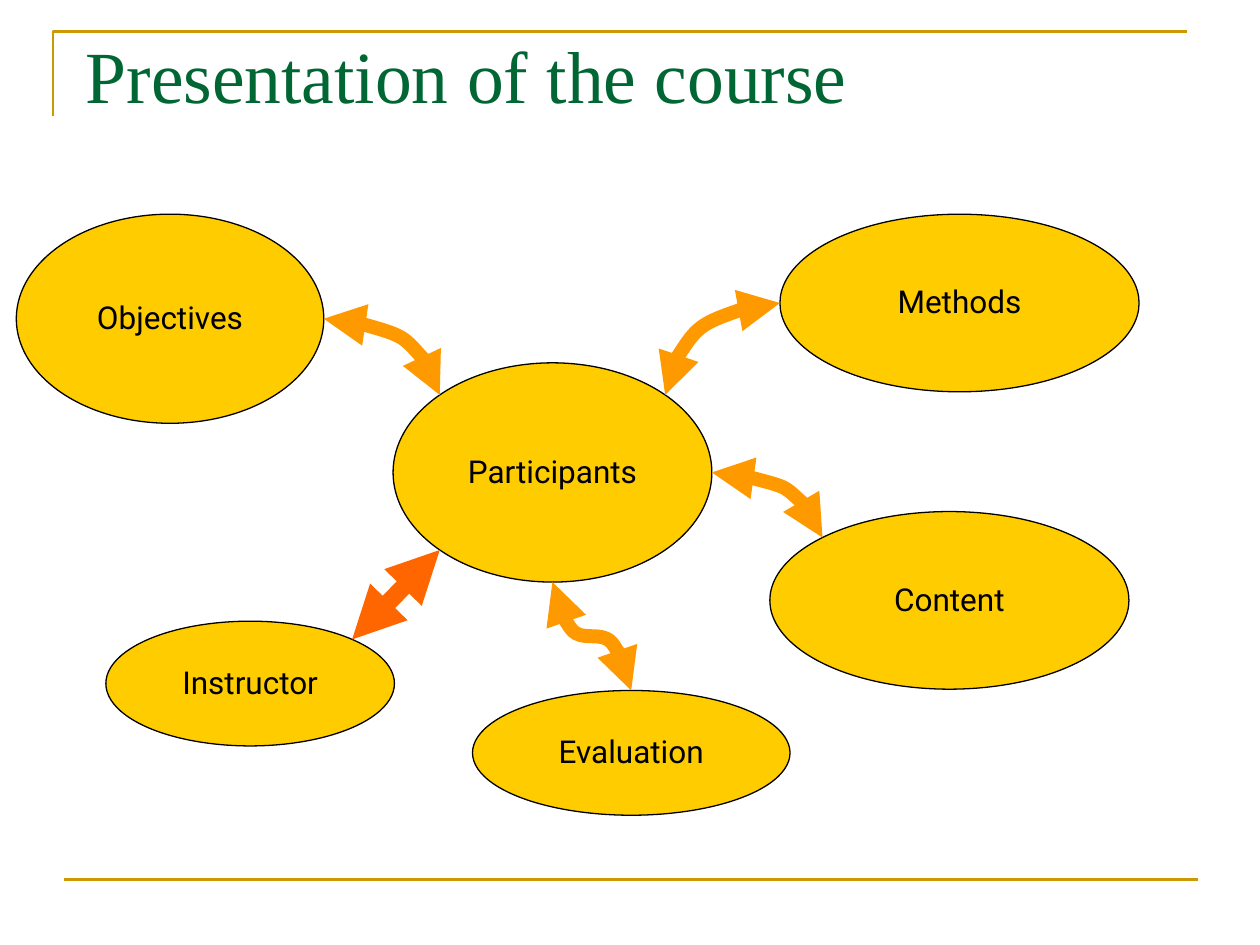
from dataclasses import dataclass
from math import sqrt

from lxml.etree import SubElement
from pptx import Presentation
from pptx.dml.color import RGBColor
from pptx.enum.shapes import MSO_CONNECTOR as Connector, MSO_SHAPE as Preset
from pptx.enum.text import MSO_ANCHOR as Anchor, MSO_AUTO_SIZE as AutoSize, PP_ALIGN as Align
from pptx.oxml.ns import qn
from pptx.util import Inches, Pt

GOLD = RGBColor(0xCC, 0x99, 0x00)
GREEN = RGBColor(0x00, 0x66, 0x33)
YELLOW = RGBColor(0xFF, 0xCC, 0x00)
AMBER = RGBColor(0xFF, 0x99, 0x00)
ORANGE = RGBColor(0xFF, 0x66, 0x00)
BLACK = RGBColor(0, 0, 0)

CELL = Inches(0.1)  # the slide is a grid of 100 columns and 75 rows
DIAGONAL = sqrt(0.5)
SITES = {
    "left": (-1, 0), "right": (1, 0), "top": (0, -1), "bottom": (0, 1),
    "top left": (-DIAGONAL, -DIAGONAL), "top right": (DIAGONAL, -DIAGONAL),
    "bottom left": (-DIAGONAL, DIAGONAL), "bottom right": (DIAGONAL, DIAGONAL),
}


@dataclass(frozen=True)
class Topic:
    label: str
    column: float
    row: float
    columns: float
    rows: float

    def site(self, name: str) -> tuple[float, float]:
        """Return the point of the outline that lies in the named direction."""
        across, down = SITES[name]
        return (self.column + self.columns / 2 * (1 + across),
                self.row + self.rows / 2 * (1 + down))


@dataclass(frozen=True)
class Link:
    start: tuple[float, float]
    end: tuple[float, float]
    geometry: str = "curvedConnector2"
    color: RGBColor = AMBER
    width: float = 8


PARTICIPANTS = Topic("Participants", 31.2, 28.8, 25.3, 17.4)
OBJECTIVES = Topic("Objectives", 1.3, 17, 24.4, 16.6)
INSTRUCTOR = Topic("Instructor", 8.4, 49.3, 22.9, 9.9)
METHODS = Topic("Methods", 61.9, 17, 28.5, 14.1)
CONTENT = Topic("Content", 61.1, 40.6, 28.5, 14.1)
EVALUATION = Topic("Evaluation", 37.5, 54.8, 25.2, 9.9)
TOPICS = [PARTICIPANTS, OBJECTIVES, INSTRUCTOR, METHODS, CONTENT, EVALUATION]

LINKS = [
    Link(OBJECTIVES.site("right"), PARTICIPANTS.site("top left")),
    Link(PARTICIPANTS.site("right"), CONTENT.site("top left")),
    Link(METHODS.site("left"), PARTICIPANTS.site("top right")),
    Link(PARTICIPANTS.site("bottom"), EVALUATION.site("top"), "curvedConnector3"),
    Link(INSTRUCTOR.site("top right"), PARTICIPANTS.site("bottom left"), "line", ORANGE, 10),
]


def grid(*cells: float) -> list[int]:
    return [round(cell * CELL) for cell in cells]


def apply_format(target: object, values: dict[str, object]) -> None:
    for name, value in values.items():
        setattr(target, name, value)


def style_line(shape, color: RGBColor, width: float) -> None:
    shape.line.color.rgb = color
    shape.line.width = Pt(width)


def write_text(shape, text: str, frame: dict, paragraph_values: dict,
               font: dict, color: RGBColor) -> None:
    apply_format(shape.text_frame, frame)
    paragraph = shape.text_frame.paragraphs[0]
    apply_format(paragraph, paragraph_values)
    run = paragraph.add_run()
    run.text = text
    apply_format(run.font, font)
    run.font.color.rgb = color


def add_line(slide, kind, start, end, color: RGBColor, width: float):
    connector = slide.shapes.add_connector(kind, *grid(*start, *end))
    style_line(connector, color, width)
    SubElement(connector._element.spPr, qn("a:effectLst"))
    return connector


def add_frame(slide) -> None:
    """Draw the corner around the title and the rule at the foot."""
    builder = slide.shapes.build_freeform(*grid(4.2, 9.2))
    builder.add_line_segments([grid(4.2, 2.5), grid(94.2, 2.5)], close=False)
    corner = builder.convert_to_shape()
    corner.shadow.inherit = False
    corner.fill.background()
    style_line(corner, GOLD, 1.5)
    add_line(slide, Connector.STRAIGHT, (5.1, 69.8), (95.1, 69.8), GOLD, 1.5)


def add_title(slide, text: str) -> None:
    title = slide.shapes.title
    apply_format(title, dict(zip(("left", "top", "width", "height"),
                                 grid(6.8, -1.9, 84.9, 15.5))))
    frame = dict.fromkeys(("margin_left", "margin_top", "margin_right", "margin_bottom"), 0)
    frame |= {"vertical_anchor": Anchor.MIDDLE, "auto_size": AutoSize.NONE}
    write_text(title, text, frame, {"alignment": Align.LEFT},
               {"name": "Times New Roman", "size": Pt(42)}, GREEN)


def add_topic(slide, topic: Topic) -> None:
    ellipse = slide.shapes.add_shape(
        Preset.OVAL, *grid(topic.column, topic.row, topic.columns, topic.rows))
    ellipse.shadow.inherit = False
    ellipse.fill.solid()
    ellipse.fill.fore_color.rgb = YELLOW
    style_line(ellipse, BLACK, 0.75)
    write_text(ellipse, topic.label,
               {"vertical_anchor": Anchor.MIDDLE, "word_wrap": True},
               {"alignment": Align.CENTER, "line_spacing": 0.95},
               {"name": "Roboto", "size": Pt(18)}, BLACK)


def add_link(slide, link: Link) -> None:
    """Draw a two-headed arrow; the S curve is turned to leave its start downwards."""
    start, end = link.start, link.end
    turned = link.geometry == "curvedConnector3"
    if turned:
        middle_x, middle_y = (start[0] + end[0]) / 2, (start[1] + end[1]) / 2
        half_x, half_y = (end[0] - start[0]) / 2, (end[1] - start[1]) / 2
        start = middle_x + half_y, middle_y - half_x
        end = middle_x - half_y, middle_y + half_x
    kind = Connector.STRAIGHT if link.geometry == "line" else Connector.CURVE
    connector = add_line(slide, kind, start, end, link.color, link.width)
    properties = connector._element.spPr
    properties.find(qn("a:prstGeom")).set("prst", link.geometry)
    if turned:
        properties.find(qn("a:xfrm")).set("rot", str(270 * 60000))
    for tip in ("a:headEnd", "a:tailEnd"):
        SubElement(properties.find(qn("a:ln")), qn(tip), type="triangle")


def main() -> None:
    presentation = Presentation()
    presentation.slide_width, presentation.slide_height = grid(100, 75)
    slide = presentation.slides.add_slide(presentation.slide_layouts[5])
    add_frame(slide)
    add_title(slide, "Presentation of the course")
    for topic in TOPICS:
        add_topic(slide, topic)
    for link in LINKS:
        add_link(slide, link)
    presentation.save("out.pptx")


if __name__ == "__main__":
    main()
